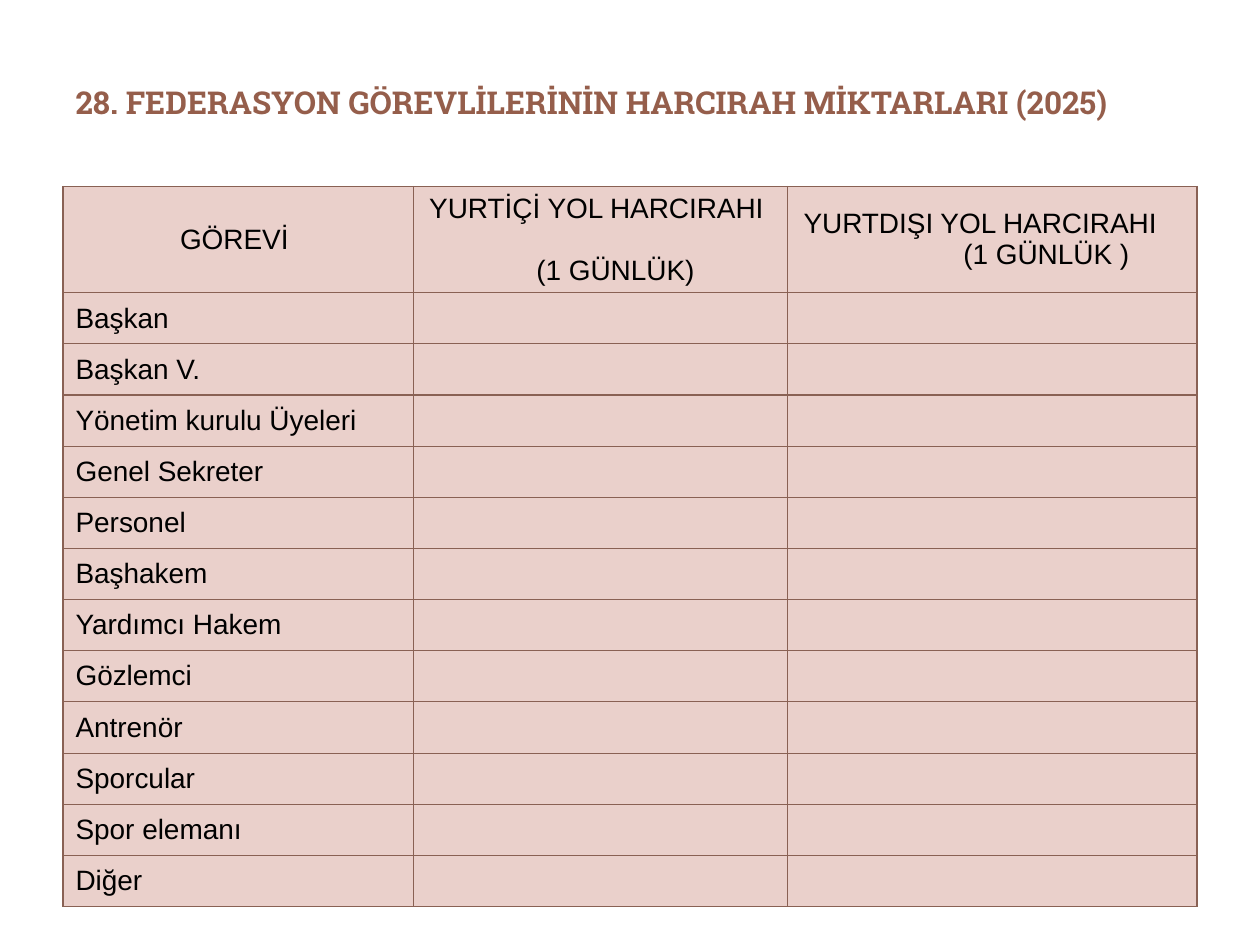
from dataclasses import dataclass

from lxml.etree import SubElement
from pptx import Presentation
from pptx.dml.color import RGBColor
from pptx.enum.text import MSO_ANCHOR, PP_ALIGN
from pptx.oxml.ns import qn
from pptx.slide import Slide
from pptx.table import Table, _Cell
from pptx.text.text import _Paragraph
from pptx.util import Inches, Pt

BROWN = RGBColor(0x95, 0x5E, 0x4B)
BORDER = RGBColor(0x89, 0x61, 0x54)
ROSE = RGBColor(0xEA, 0xD0, 0xCB)
BLACK = RGBColor(0, 0, 0)
WIDTHS = (2.78, 2.97, 3.25)


@dataclass
class Line:
    text: str
    left: float = 0
    right: float = 0
    gap: float = 0


@dataclass
class Duty:
    name: str
    height: float = 0.39


HEADS = (
    (Line("GÖREVİ", right=0.06),),
    (Line("YURTİÇİ YOL HARCIRAHI", right=0.06), Line("(1 GÜNLÜK)", left=0.24, gap=18)),
    (Line("YURTDIŞI YOL HARCIRAHI", right=0.19), Line("(1 GÜNLÜK )", left=0.86)),
)
DUTIES = (
    Duty("Başkan"),
    Duty("Başkan V."),
    Duty("Yönetim kurulu Üyeleri"),
    Duty("Genel Sekreter"),
    Duty("Personel"),
    Duty("Başhakem"),
    Duty("Yardımcı Hakem"),
    Duty("Gözlemci"),
    Duty("Antrenör", 0.41),
    Duty("Sporcular"),
    Duty("Spor elemanı"),
    Duty("Diğer"),
)


def style(para: _Paragraph, font: str, size: float, color: RGBColor, bold: bool = False) -> None:
    for run in para.runs:
        run.font.name = font
        run.font.size = Pt(size)
        run.font.bold = bold
        run.font.color.rgb = color


def dress(cell: _Cell) -> None:
    cell.vertical_anchor = MSO_ANCHOR.MIDDLE
    props = cell._tc.get_or_add_tcPr()
    for side in ("lnL", "lnR", "lnT", "lnB"):
        edge = SubElement(props, qn(f"a:{side}"), w=str(Pt(0.75)))
        fill = SubElement(edge, qn("a:solidFill"))
        SubElement(fill, qn("a:srgbClr"), val=str(BORDER))
    cell.fill.solid()
    cell.fill.fore_color.rgb = ROSE


def write_head(cell: _Cell, lines: tuple[Line, ...]) -> None:
    frame = cell.text_frame
    frame.text = "\n".join(line.text for line in lines)
    for para, line in zip(frame.paragraphs, lines):
        para.alignment = PP_ALIGN.CENTER
        para.space_before = Pt(line.gap)
        props = para._p.get_or_add_pPr()
        props.set("marL", str(Inches(line.left)))
        props.set("marR", str(Inches(line.right)))
        style(para, "Arial", 16, BLACK)


def add_title(slide: Slide) -> None:
    title = slide.shapes.title
    title.left, title.top = Inches(0.5), Inches(0.3)
    title.width, title.height = Inches(9), Inches(1.25)
    frame = title.text_frame
    frame.text = "28. FEDERASYON GÖREVLİLERİNİN HARCIRAH MİKTARLARI (2025)"
    frame.word_wrap = True
    frame.vertical_anchor = MSO_ANCHOR.MIDDLE
    frame.margin_bottom = Inches(0.28)
    para = frame.paragraphs[0]
    para.alignment = PP_ALIGN.LEFT
    style(para, "Roboto Slab", 18, BROWN, True)


def add_grid(slide: Slide) -> Table:
    heights = (0.84, *(duty.height for duty in DUTIES))
    grid = slide.shapes.add_table(
        len(heights), len(WIDTHS), Inches(0.5), Inches(1.48),
        Inches(sum(WIDTHS)), Inches(sum(heights)),
    ).table
    grid.first_row = grid.horz_banding = False
    for column, width in zip(grid.columns, WIDTHS):
        column.width = Inches(width)
    for row, height in zip(grid.rows, heights):
        row.height = Inches(height)
    for cell in grid.iter_cells():
        dress(cell)
    return grid


def main() -> None:
    deck = Presentation()
    deck.slide_width, deck.slide_height = Inches(10), Inches(7.5)
    slide = deck.slides.add_slide(deck.slide_layouts[5])
    add_title(slide)
    grid = add_grid(slide)
    for index, lines in enumerate(HEADS):
        write_head(grid.cell(0, index), lines)
    for index, duty in enumerate(DUTIES, 1):
        frame = grid.cell(index, 0).text_frame
        frame.text = duty.name
        style(frame.paragraphs[0], "Arial", 16, BLACK)
    deck.save("out.pptx")


if __name__ == "__main__":
    main()
